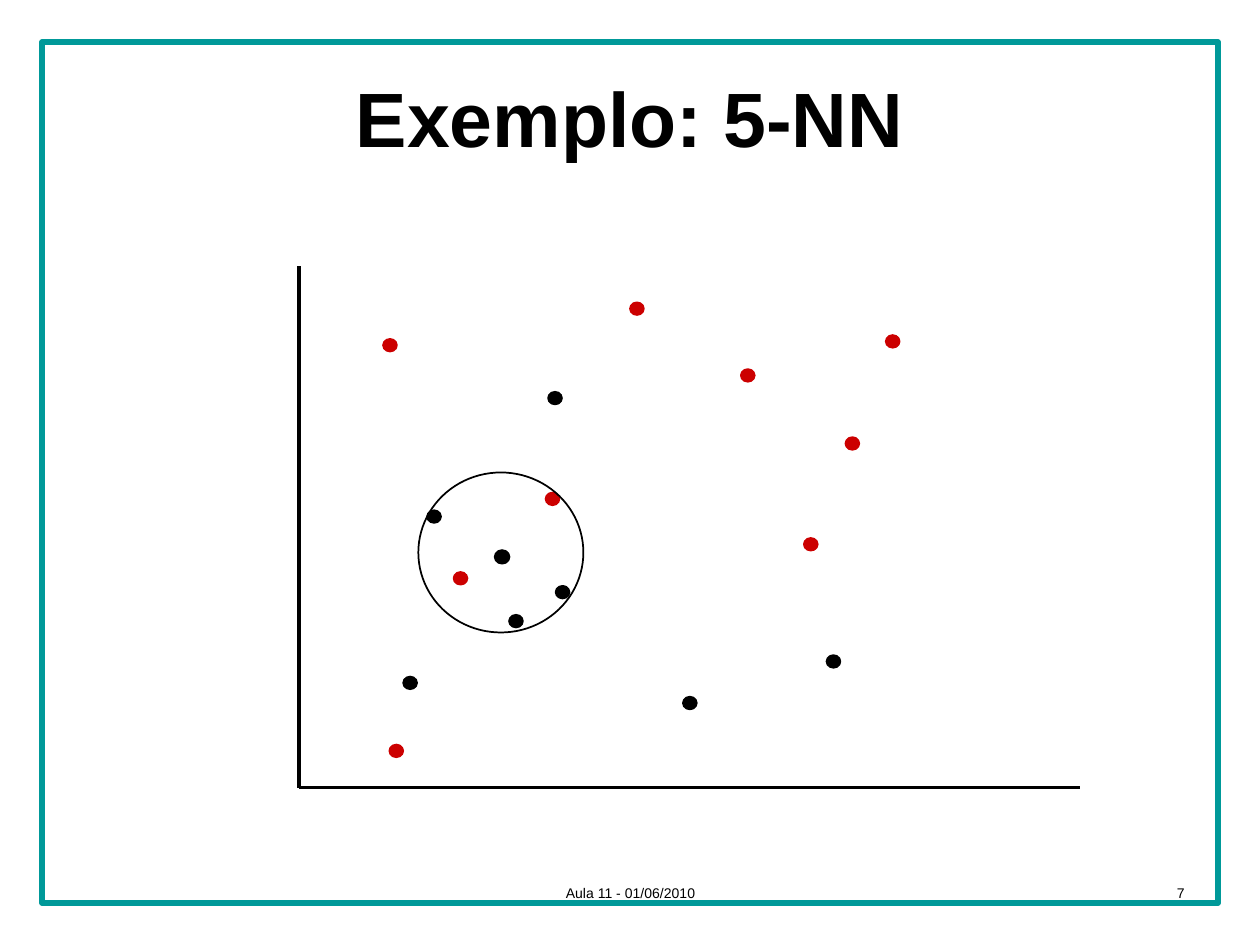
from lxml import etree
from pptx import Presentation
from pptx import util as u
from pptx.dml.color import RGBColor
from pptx.enum import shapes, text
from pptx.oxml.ns import qn

WIDTH, HEIGHT = 10, 7.5
FONT = "Arial"
COLORS = {"frame": "009999", "ink": "000000", "red": "CC0000"}
DOT = (0.11, 0.1)
QUERY = (3.93, 4.37)
NEIGHBOURHOOD = (3.32, 3.75, 1.31, 1.27)
ORIGIN = (2.37, 6.25)
AXIS_ENDS = [(2.37, 2.11), (8.57, 6.25)]
BEHIND_RING = [
    (3.04, 2.69, "red"), (4.35, 3.11, "ink"), (3.39, 4.05, "ink"),
    (4.33, 3.91, "red"), (4.04, 4.88, "ink"), (3.6, 4.54, "red"),
    (5.42, 5.53, "ink"), (4.41, 4.65, "ink"), (5.88, 2.93, "red"),
    (6.38, 4.27, "red"), (3.09, 5.91, "red"), (6.56, 5.2, "ink"),
]
BEFORE_RING = [
    (*QUERY, "ink"), (3.2, 5.37, "ink"), (6.71, 3.47, "red"),
    (7.03, 2.66, "red"), (5, 2.4, "red"),
]


def inches(values):
    return [u.Inches(value) for value in values]


def color(name):
    return RGBColor.from_string(COLORS[name])


def add_outline(slide, kind, box, line, weight, fill=None):
    outline = slide.shapes.add_shape(kind, *inches(box))
    outline.shadow.inherit = False
    if fill:
        outline.fill.solid()
        outline.fill.fore_color.rgb = color(fill)
    else:
        outline.fill.background()
    outline.line.color.rgb = color(line)
    outline.line.width = u.Pt(weight)


def add_dots(slide, points):
    for left, top, label in points:
        add_outline(slide, shapes.MSO_SHAPE.OVAL, (left, top, *DOT), label, 1, label)


def add_axis(slide, end):
    axis = slide.shapes.add_connector(
        shapes.MSO_CONNECTOR.STRAIGHT, *inches(ORIGIN), *inches(end))
    axis.line.color.rgb = color("ink")
    axis.line.width = u.Pt(2.25)
    etree.SubElement(axis._element.spPr, qn("a:effectLst"))


def add_text(slide, box, words, size, align, bold=False):
    frame = slide.shapes.add_textbox(*inches(box)).text_frame
    frame.word_wrap = True
    frame.vertical_anchor = text.MSO_ANCHOR.MIDDLE
    frame.text = words
    paragraph = frame.paragraphs[0]
    paragraph.alignment = align
    font = paragraph.runs[0].font
    font.name = FONT
    font.size = u.Pt(size)
    font.bold = bold
    font.color.rgb = color("ink")


def main():
    deck = Presentation()
    deck.slide_width, deck.slide_height = inches((WIDTH, HEIGHT))
    slide = deck.slides.add_slide(deck.slide_layouts[6])
    margin = WIDTH / 30
    frame = (margin, margin, WIDTH - 2 * margin, HEIGHT - 2 * margin)
    add_outline(slide, shapes.MSO_SHAPE.RECTANGLE, frame, "frame", 3)
    add_text(slide, (0.05 * WIDTH, 0.04 * HEIGHT, 0.9 * WIDTH, HEIGHT / 6),
             "Exemplo: 5-NN", 44, text.PP_ALIGN.CENTER, True)
    for end in AXIS_ENDS:
        add_axis(slide, end)
    add_dots(slide, BEHIND_RING)
    add_outline(slide, shapes.MSO_SHAPE.OVAL, (*QUERY, *DOT), "ink", 1.5)
    add_outline(slide, shapes.MSO_SHAPE.OVAL, NEIGHBOURHOOD, "ink", 1)
    add_dots(slide, BEFORE_RING)
    footer_top, footer_height = 6.83, 0.52
    add_text(slide, (3.42, footer_top, 3.17, footer_height),
             "Aula 11 - 01/06/2010", 8, text.PP_ALIGN.CENTER)
    add_text(slide, (7.17, footer_top, 2.33, footer_height),
             "7", 8, text.PP_ALIGN.RIGHT)
    deck.save("out.pptx")


if __name__ == "__main__":
    main()
